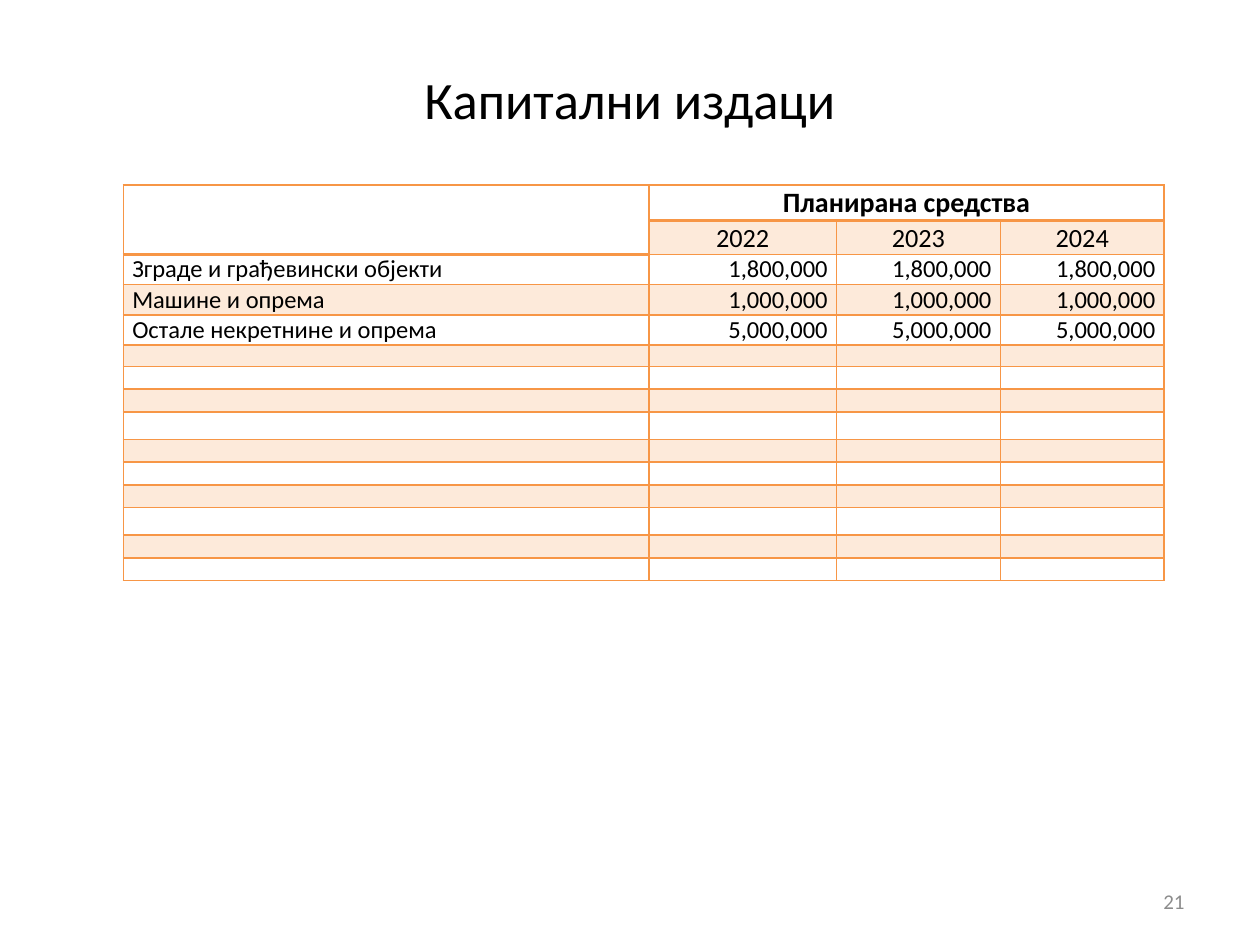
from lxml.etree import SubElement
from pptx import Presentation
from pptx.dml.color import RGBColor as RGB
from pptx.enum.text import MSO_ANCHOR as Anchor, PP_ALIGN as Align
from pptx.oxml.ns import qn
from pptx.util import Inches, Pt

COLORS = {"text": "000000", "number": "8C8C8C", "line": "F79646", "band": "FDEADA"}
FONT = "Calibri"
COLUMNS = [4.17, 1.49, 1.3, 1.3]
HEADER_ROWS = [0.28, 0.27]
FILLED_ROWS = [0.24] * 3
EMPTY_ROWS = [0.17] + [0.18, 0.18, 0.22, 0.18] * 2 + [0.18]
ROWS = HEADER_ROWS + FILLED_ROWS + EMPTY_ROWS
YEARS = ["2022", "2023", "2024"]
EXPENSES = [
    ("Зграде и грађевински објекти", "1,800,000"),
    ("Машине и опрема", "1,000,000"),
    ("Остале некретнине и опрема", "5,000,000"),
]


def write(paragraph, text, size, align, color="text", bold=False):
    paragraph.alignment = align
    run = paragraph.add_run()
    run.text = text
    run.font.name = FONT
    run.font.size = Pt(size)
    run.font.bold = bold
    run.font.color.rgb = RGB.from_string(COLORS[color])


def draw_border(cell, side, width):
    line = SubElement(cell._tc.get_or_add_tcPr(), qn(f"a:ln{side}"), w=str(Pt(width)))
    fill = SubElement(line, qn("a:solidFill"))
    SubElement(fill, qn("a:srgbClr"), val=COLORS["line"])


presentation = Presentation()
presentation.slide_width = Inches(10)
presentation.slide_height = Inches(7.5)
slide = presentation.slides.add_slide(presentation.slide_layouts[5])

title = slide.shapes.title
title.left, title.top = Inches(0.5), Inches(0.3)
title.width, title.height = Inches(9), Inches(0.96)
title.text_frame.vertical_anchor = Anchor.MIDDLE
write(title.text_frame.paragraphs[0], "Капитални издаци", 30, Align.CENTER)

frame = slide.shapes.add_table(
    len(ROWS), len(COLUMNS), Inches(0.98), Inches(1.47),
    Inches(sum(COLUMNS)), Inches(sum(ROWS)))
table = frame.table
table.first_row = False
table.horz_banding = False
for column, width in zip(table.columns, COLUMNS):
    column.width = Inches(width)
for row, height in zip(table.rows, ROWS):
    row.height = Inches(height)

contents = {(0, 1): ("Планирана средства", 16, Align.CENTER, True)}
for column, year in enumerate(YEARS, 1):
    contents[1, column] = (year, 15, Align.CENTER, False)
for row, (expense, amount) in enumerate(EXPENSES, len(HEADER_ROWS)):
    contents[row, 0] = (expense, 14, Align.LEFT, False)
    for column in range(1, len(COLUMNS)):
        contents[row, column] = (amount, 14, Align.RIGHT, False)

for row in range(len(ROWS)):
    for column in range(len(COLUMNS)):
        cell = table.cell(row, column)
        heading_end = 1 if column == 0 else 0
        for side in "LRTB":
            thick = (side, row) in (("B", heading_end), ("T", heading_end + 1))
            draw_border(cell, side, 2 if thick or (side, row, column) == ("B", 0, 0) else 1)
        if row % 2 and (row, column) != (1, 0):
            cell.fill.solid()
            cell.fill.fore_color.rgb = RGB.from_string(COLORS["band"])
        else:
            cell.fill.background()
        cell.margin_left = cell.margin_right = Inches(0.07)
        cell.margin_top = cell.margin_bottom = 0
        cell.vertical_anchor = Anchor.BOTTOM if row < len(HEADER_ROWS) else Anchor.MIDDLE
        paragraph = cell.text_frame.paragraphs[0]
        if (row, column) in contents:
            text, size, align, bold = contents[row, column]
            write(paragraph, text, size, align, bold=bold)
        else:
            SubElement(paragraph._p, qn("a:endParaRPr"), sz="800")

table.cell(0, 0).merge(table.cell(1, 0))
table.cell(0, 1).merge(table.cell(0, 3))

number = slide.shapes.add_textbox(Inches(7.17), Inches(6.95), Inches(2.33), Inches(0.4))
number.text_frame.word_wrap = True
number.text_frame.vertical_anchor = Anchor.MIDDLE
write(number.text_frame.paragraphs[0], "21", 12, Align.RIGHT, "number")

presentation.save("out.pptx")
